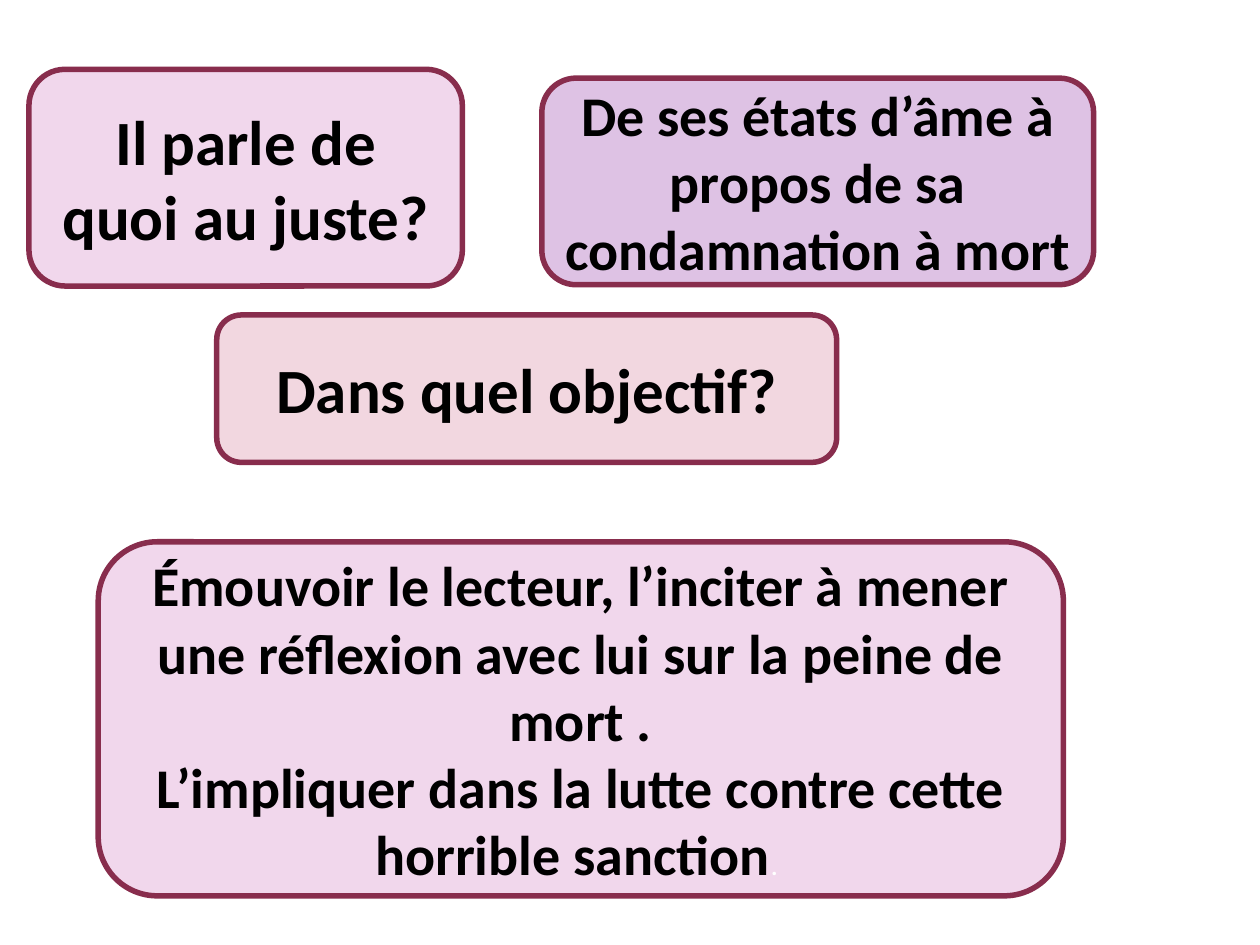
"""Build a slide of two questions and their answers in rounded boxes."""
from pptx import Presentation
from pptx.dml.color import RGBColor
from pptx.enum.shapes import MSO_SHAPE as Shape
from pptx.enum.text import MSO_ANCHOR as Anchor, PP_ALIGN as Align
from pptx.util import Inches, Pt

PINK = RGBColor(0xF1, 0xD7, 0xEC)
LILAC = RGBColor(0xDE, 0xC2, 0xE4)
ROSE = RGBColor(0xF2, 0xD7, 0xE0)
BURGUNDY = RGBColor(0x88, 0x2D, 0x4D)
BLACK = RGBColor(0, 0, 0)
WHITE = RGBColor(0xFF, 0xFF, 0xFF)

BOXES = [
    (0.23, 0.55, 3.44, 1.72, PINK, 36, ["Il parle de quoi au juste?"]),
    (4.3, 0.62, 4.38, 1.64, LILAC, 32,
     ["De ses états d’âme à propos de sa condamnation à mort"]),
    (1.72, 2.5, 4.92, 1.17, ROSE, 36, ["Dans quel objectif?"]),
    (0.78, 4.3, 7.66, 2.81, PINK, 32,
     ["Émouvoir le lecteur, l’inciter à mener une réflexion avec lui "
      "sur la peine de mort .",
      "L’impliquer dans la lutte contre cette horrible sanction"]),
]


def set_font(font, name, size, color, bold):
    font.name = name
    font.size = Pt(size)
    font.color.rgb = color
    font.bold = bold


deck = Presentation()
deck.slide_width, deck.slide_height = Inches(10), Inches(7.5)
slide = deck.slides.add_slide(deck.slide_layouts[6])

for left, top, width, height, fill, size, lines in BOXES:
    box = slide.shapes.add_shape(Shape.ROUNDED_RECTANGLE, Inches(left), Inches(top),
                                 Inches(width), Inches(height))
    box.shadow.inherit = False
    box.fill.solid()
    box.fill.fore_color.rgb = fill
    box.line.color.rgb = BURGUNDY
    box.line.width = Pt(3.15)
    frame = box.text_frame
    frame.word_wrap = True
    frame.vertical_anchor = Anchor.MIDDLE
    for index, line in enumerate(lines):
        para = frame.add_paragraph() if index else frame.paragraphs[0]
        para.alignment = Align.CENTER
        para.add_run().text = line
        set_font(para.font, "Calibri", size, BLACK, True)

full_stop = para.add_run()
full_stop.text = ". "
set_font(full_stop.font, "Roboto", 18, WHITE, False)

deck.save("out.pptx")
